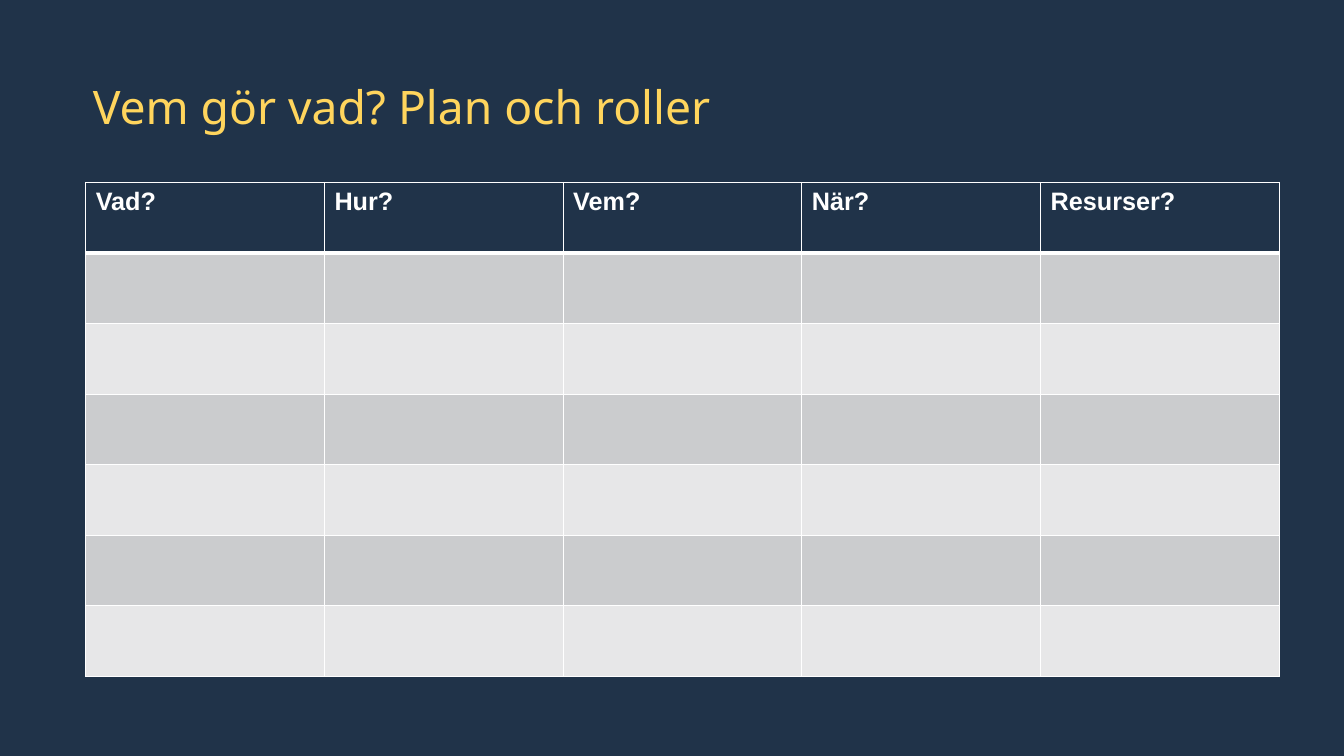
from lxml.etree import SubElement as Sub
from pptx import Presentation as Deck
from pptx.dml.color import RGBColor as Color
from pptx.enum.text import MSO_ANCHOR as Anchor, PP_ALIGN as Align
from pptx.oxml.ns import qn
from pptx.util import Inches, Pt

NAVY, GOLD, WHITE = "203349", "FFD55D", "FFFFFF"
BANDS = ["E7E7E8", "CBCCCE"]
HEADS = ["Vad?", "Hur?", "Vem?", "När?", "Resurser?"]
ROWS = 7


def paint(fill, tone):
    fill.solid()
    fill.fore_color.rgb = Color.from_string(tone)


def style(para, face, size, tone, bold=False):
    for run in para.runs:
        font = run.font
        font.name, font.size, font.bold = face, Pt(size), bold
        paint(font.fill, tone)


def edge(cell, side, width):
    props = cell._tc.get_or_add_tcPr()
    line = Sub(props, qn(f"a:ln{side}"), w=str(Pt(width)))
    fill = Sub(line, qn("a:solidFill"))
    Sub(fill, qn("a:srgbClr"), val=WHITE)


def title(slide, box, text):
    shape = slide.shapes.title
    shape.left, shape.top, shape.width, shape.height = box
    frame = shape.text_frame
    frame.text = text
    frame.word_wrap = True
    frame.vertical_anchor = Anchor.TOP
    frame.margin_left = frame.margin_right = 0
    frame.margin_top = frame.margin_bottom = 0
    para = frame.paragraphs[0]
    para.alignment = Align.LEFT
    para.line_spacing = 0.9
    style(para, "Noto Sans", 33, GOLD)


def plan(slide, box):
    table = slide.shapes.add_table(ROWS, len(HEADS), *box).table
    for col in table.columns:
        col.width = box[2] // len(HEADS)
    for r, row in enumerate(table.rows):
        row.height = box[3] // ROWS
        for c, cell in enumerate(row.cells):
            for side in "LR":
                edge(cell, side, 1)
            edge(cell, "T", 3 if r == 1 else 1)
            edge(cell, "B", 3 if r == 0 else 1)
            paint(cell.fill, BANDS[r % 2] if r else NAVY)
            if r == 0:
                cell.text_frame.text = HEADS[c]
                style(cell.text_frame.paragraphs[0], "Arial", 18, WHITE, True)


def main():
    deck = Deck()
    deck.slide_width, deck.slide_height = Inches(13.33), Inches(7.5)
    slide = deck.slides.add_slide(deck.slide_layouts[5])
    paint(slide.background.fill, NAVY)
    title(slide, [Inches(n) for n in (0.92, 0.84, 11.5, 1.1)],
          "Vem gör vad? Plan och roller")
    plan(slide, [Inches(n) for n in (0.85, 1.81, 11.84, 4.9)])
    deck.save("out.pptx")


if __name__ == "__main__":
    main()
